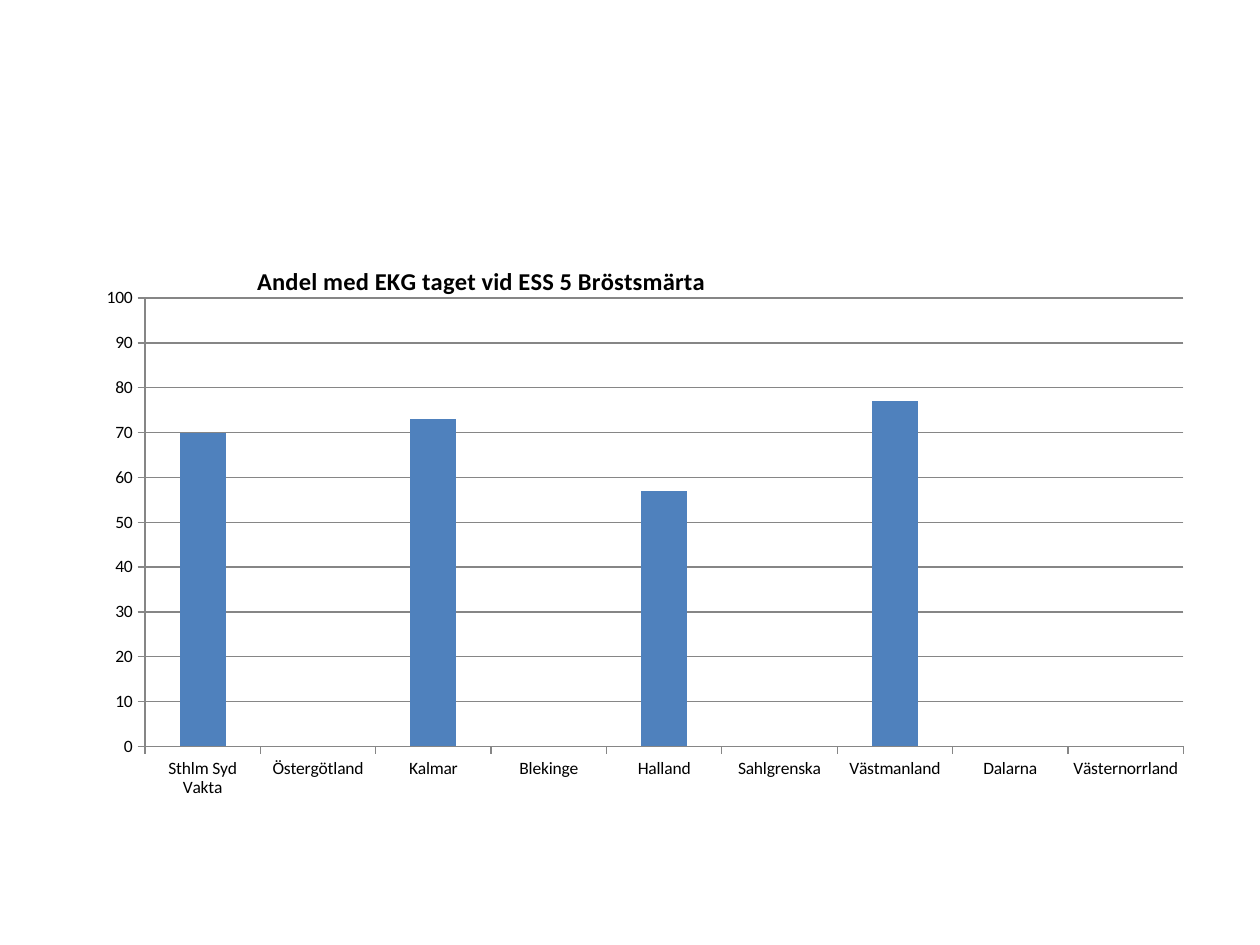
import dataclasses

import lxml.etree
import pptx
import pptx.chart.data
import pptx.dml.color
import pptx.enum.chart
import pptx.oxml.ns
import pptx.util

Inches = pptx.util.Inches
Pt = pptx.util.Pt
qn = pptx.oxml.ns.qn


@dataclasses.dataclass(frozen=True)
class Theme:
    face: str = "Calibri"
    ink: str = "000000"
    bar: str = "4F81BD"
    rule: str = "868686"
    label: int = 10
    head: int = 14


THEME = Theme()
TITLE = "Andel med EKG taget vid ESS 5 Bröstsmärta"
SHARES = {
    "Sthlm Syd Vakta": 70,
    "Östergötland": None,
    "Kalmar": 73,
    "Blekinge": None,
    "Halland": 57,
    "Sahlgrenska": None,
    "Västmanland": 77,
    "Dalarna": None,
    "Västernorrland": None,
}


def paint(code):
    return pptx.dml.color.RGBColor.from_string(code)


def style_font(font, size, bold=False):
    font.name = THEME.face
    font.size = Pt(size)
    font.bold = bold
    font.color.rgb = paint(THEME.ink)


def style_line(line):
    line.color.rgb = paint(THEME.rule)
    line.width = Pt(0.75)


def set_layout(part, index, **places):
    old = part.find(qn("c:layout"))
    if old is not None:
        part.remove(old)
    layout = lxml.etree.Element(qn("c:layout"))
    part.insert(index, layout)
    manual = lxml.etree.SubElement(layout, qn("c:manualLayout"))
    for name, value in places.items():
        lxml.etree.SubElement(manual, qn(f"c:{name}")).set("val", str(value))


def add_title(chart):
    chart.has_title = True
    title = chart.chart_title
    para = title.text_frame.paragraphs[0]
    para.text = TITLE
    style_font(para.runs[0].font, THEME.head, True)
    part = title._element
    set_layout(part, 1, xMode="edge", yMode="edge", x=0.15, y=0.08)
    part.find(qn("c:overlay")).set("val", "1")


def style_axes(chart):
    for axis in (chart.category_axis, chart.value_axis):
        style_font(axis.tick_labels.font, THEME.label)
        style_line(axis.format.line)
        axis.major_tick_mark = pptx.enum.chart.XL_TICK_MARK.OUTSIDE
        axis.minor_tick_mark = pptx.enum.chart.XL_TICK_MARK.NONE
    axis = chart.value_axis
    axis.minimum_scale = 0
    axis.maximum_scale = 100
    axis.major_unit = 10
    axis.has_major_gridlines = True
    style_line(axis.major_gridlines.format.line)


def add_bars(slide):
    data = pptx.chart.data.CategoryChartData()
    data.categories = list(SHARES)
    data.add_series("Series 1", list(SHARES.values()))
    chart = slide.shapes.add_chart(
        pptx.enum.chart.XL_CHART_TYPE.COLUMN_CLUSTERED,
        Inches(0.67), Inches(1.7), Inches(8.9), Inches(4.63), data,
    ).chart
    style_font(chart.font, THEME.label)
    chart.has_legend = False
    add_title(chart)
    style_axes(chart)
    plot = chart.plots[0]
    plot.gap_width = 150
    plot.vary_by_categories = False
    fill = plot.series[0].format.fill
    fill.solid()
    fill.fore_color.rgb = paint(THEME.bar)
    area = chart._chartSpace.find(qn("c:chart")).find(qn("c:plotArea"))
    set_layout(area, 0, layoutTarget="inner", xMode="edge", yMode="edge",
               x=0.054, y=0.146, w=0.926, h=0.78)


def main():
    deck = pptx.Presentation()
    deck.slide_width = Inches(10)
    deck.slide_height = Inches(7.5)
    slide = deck.slides.add_slide(deck.slide_layouts[6])
    add_bars(slide)
    deck.save("out.pptx")


if __name__ == "__main__":
    main()
